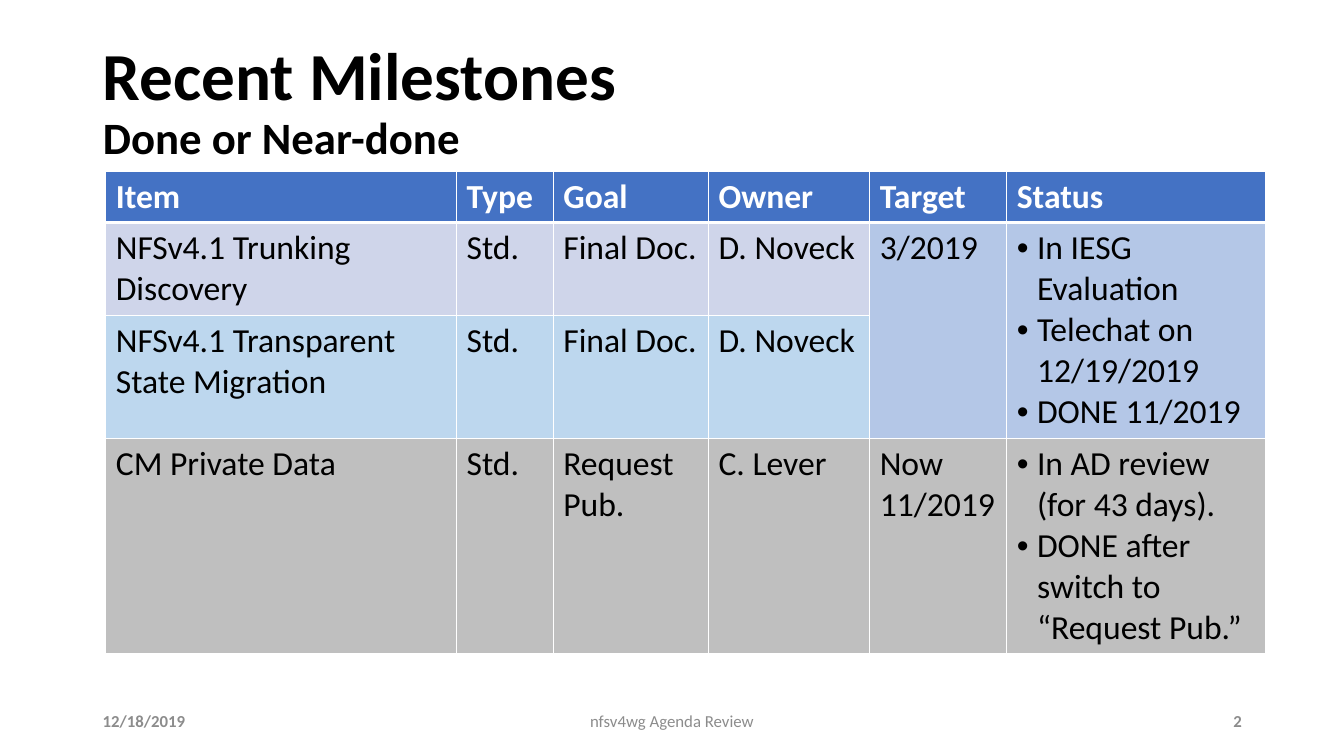
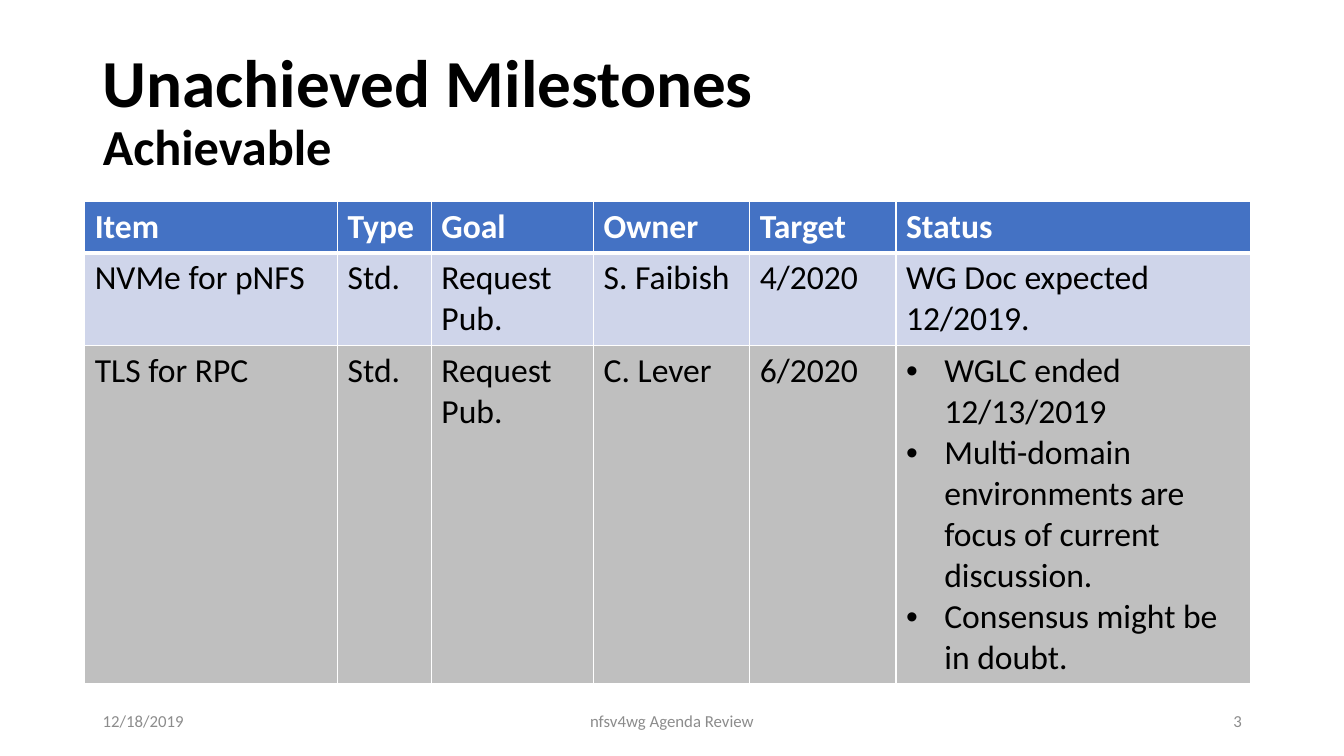
from dataclasses import dataclass

from lxml import etree
from pptx import Presentation
from pptx import util as u
from pptx.dml import color
from pptx.enum import text
from pptx.oxml import ns


@dataclass(frozen=True)
class Theme:
    font: str = "Calibri"
    ink: str = "000000"
    white: str = "FFFFFF"
    header: str = "4472C4"
    lavender: str = "CFD5EA"
    sky: str = "BDD7EE"
    merged: str = "B4C7E7"
    gray: str = "BFBFBF"
    footer: str = "8C8C8C"
    title_size: int = 48
    body_size: int = 24
    footer_size: int = 12
    thin: float = 1
    thick: float = 3


THEME = Theme()
WIDTH, HEIGHT = u.Inches(13.333), u.Inches(7.5)

# Lengths are percentages of the slide's width (across) or height (down)
MARGIN, CONTENT_WIDTH = 6.9, 86.25
TITLE_HEIGHT = 19.33
FOOTER_TOP, FOOTER_HEIGHT = 92.67, 5.33
SIDE_WIDTH, MIDDLE_WIDTH = 22.5, 33.75
HEADER_HEIGHT, TWO_LINES = 6.55, 12.27
HEADINGS = ("Item", "Type", "Goal", "Owner", "Target", "Status")


@dataclass(frozen=True)
class Entry:
    """Cell content; an entry may span rows and have its own fill."""
    lines: tuple[str, ...]
    bulleted: bool = False
    rows: int = 1
    fill: str | None = None


@dataclass(frozen=True)
class Row:
    height: float
    fill: str
    entries: tuple[str | Entry | None, ...]  # None: covered from above


@dataclass(frozen=True)
class Milestones:
    title: str
    subtitle: str
    subtitle_size: int
    title_top: float
    left: float
    top: float
    columns: tuple[float, ...]
    bullet_indent: float
    rows: tuple[Row, ...]
    number: int
    bold_footer: bool = False


SLIDES = (
    Milestones(
        "Recent Milestones", "Done or Near-done", 32, 4,
        7.87, 22.67, (26.1, 7.2, 11.55, 12, 10.2, 19.28), 0.2,
        (
            Row(TWO_LINES, THEME.lavender, (
                "NFSv4.1 Trunking Discovery", "Std.", "Final Doc.", "D. Noveck",
                Entry(("3/2019",), rows=2, fill=THEME.merged),
                Entry(("In IESG Evaluation", "Telechat on 12/19/2019", "DONE 11/2019"),
                      bulleted=True, rows=2, fill=THEME.merged))),
            Row(16.27, THEME.sky, (
                "NFSv4.1 Transparent State Migration", "Std.", "Final Doc.",
                "D. Noveck", None, None)),
            Row(28.4, THEME.gray, (
                "CM Private Data", "Std.", "Request Pub.", "C. Lever", "Now 11/2019",
                Entry(("In AD review (for 43 days).",
                       "DONE after switch to “Request Pub.”"), bulleted=True))),
        ), 2, bold_footer=True),
    Milestones(
        "Unachieved Milestones", "Achievable", 36, 5.33,
        6.3, 26.67, (18.82, 6.98, 12.07, 11.62, 10.88, 26.4), 0.38,
        (
            Row(TWO_LINES, THEME.lavender, (
                "NVMe for pNFS", "Std.", "Request Pub.", "S. Faibish", "4/2020",
                "WG Doc expected 12/2019.")),
            Row(44.67, THEME.gray, (
                "TLS for RPC", "Std.", "Request Pub.", "C. Lever", "6/2020",
                Entry(("WGLC ended 12/13/2019",
                       "Multi-domain environments are focus of current discussion.",
                       "Consensus might be in doubt."), bulleted=True))),
        ), 3),
)


def across(share: float) -> int:
    return round(WIDTH * share / 100)


def down(share: float) -> int:
    return round(HEIGHT * share / 100)


def add_span(para, words: str, size: float, ink: str, bold: bool = False) -> None:
    span = para.add_run()
    span.text = words
    span.font.name = THEME.font
    span.font.size = u.Pt(size)
    span.font.bold = bold
    span.font.color.rgb = color.RGBColor.from_string(ink)


def add_bullet(para, indent: float) -> None:
    props = para._p.get_or_add_pPr()
    props.set("marL", str(u.Inches(indent)))
    props.set("indent", str(-u.Inches(indent)))
    etree.SubElement(props, ns.qn("a:buFont"), typeface="Arial")
    etree.SubElement(props, ns.qn("a:buChar"), char="•")


def set_borders(cell, top: float, bottom: float) -> None:
    props = cell._tc.get_or_add_tcPr()
    edges = (("L", THEME.thin), ("R", THEME.thin), ("T", top), ("B", bottom))
    for place, (side, points) in enumerate(edges):
        line = etree.Element(ns.qn(f"a:ln{side}"), w=str(u.Pt(points)))
        fill = etree.SubElement(line, ns.qn("a:solidFill"))
        etree.SubElement(fill, ns.qn("a:srgbClr"), val=THEME.white)
        props.insert(place, line)


def add_title(page, item: Milestones) -> None:
    box = page.shapes.title
    box.left, box.top = across(MARGIN), down(item.title_top)
    box.width, box.height = across(CONTENT_WIDTH), down(TITLE_HEIGHT)
    frame = box.text_frame
    frame.auto_size = text.MSO_AUTO_SIZE.NONE
    frame.vertical_anchor = text.MSO_ANCHOR.MIDDLE
    para = frame.paragraphs[0]
    para.alignment = text.PP_ALIGN.LEFT
    para.line_spacing = 0.9
    add_span(para, item.title, THEME.title_size, THEME.ink, bold=True)
    para.add_line_break()
    add_span(para, item.subtitle, item.subtitle_size, THEME.ink, bold=True)


def fill_cell(cell, entry: Entry, ink: str, bold: bool, indent: float) -> None:
    frame = cell.text_frame
    for index, line in enumerate(entry.lines):
        para = frame.add_paragraph() if index else frame.paragraphs[0]
        if entry.bulleted:
            add_bullet(para, indent)
        add_span(para, line, THEME.body_size, ink, bold)


def add_milestone_table(page, item: Milestones) -> None:
    rows = (Row(HEADER_HEIGHT, THEME.header, HEADINGS), *item.rows)
    table = page.shapes.add_table(
        len(rows), len(item.columns), across(item.left), down(item.top),
        across(sum(item.columns)), down(sum(row.height for row in rows))).table
    for column, width in zip(table.columns, item.columns):
        column.width = across(width)
    for r, row in enumerate(rows):
        table.rows[r].height = down(row.height)
        is_header = r == 0
        for c, value in enumerate(row.entries):
            cell = table.cell(r, c)
            # The heavy rule lies between the header and the first row
            set_borders(cell, THEME.thick if r == 1 else THEME.thin,
                        THEME.thick if is_header else THEME.thin)
            entry = Entry((value,)) if isinstance(value, str) else value
            cell.fill.solid()
            fill = entry.fill if entry and entry.fill else row.fill
            cell.fill.fore_color.rgb = color.RGBColor.from_string(fill)
            if entry is None:
                continue
            if entry.rows > 1:
                cell.merge(table.cell(r + entry.rows - 1, c))
            fill_cell(cell, entry, THEME.white if is_header else THEME.ink,
                      is_header, item.bullet_indent)


def add_footer(page, item: Milestones) -> None:
    align = text.PP_ALIGN
    right_edge = MARGIN + CONTENT_WIDTH
    parts = (
        (MARGIN, SIDE_WIDTH, align.LEFT, "12/18/2019", item.bold_footer),
        (50 - MIDDLE_WIDTH / 2, MIDDLE_WIDTH, align.CENTER,
         "nfsv4wg Agenda Review", False),
        (right_edge - SIDE_WIDTH, SIDE_WIDTH, align.RIGHT,
         str(item.number), item.bold_footer),
    )
    for left, width, alignment, words, bold in parts:
        box = page.shapes.add_textbox(across(left), down(FOOTER_TOP),
                                      across(width), down(FOOTER_HEIGHT))
        box.text_frame.word_wrap = True
        box.text_frame.vertical_anchor = text.MSO_ANCHOR.MIDDLE
        para = box.text_frame.paragraphs[0]
        para.alignment = alignment
        add_span(para, words, THEME.footer_size, THEME.footer, bold)


def main() -> None:
    deck = Presentation()
    deck.slide_width, deck.slide_height = WIDTH, HEIGHT
    title_only = deck.slide_layouts.get_by_name("Title Only")
    for item in SLIDES:
        page = deck.slides.add_slide(title_only)
        add_title(page, item)
        add_milestone_table(page, item)
        add_footer(page, item)
    deck.save("out.pptx")


if __name__ == "__main__":
    main()
